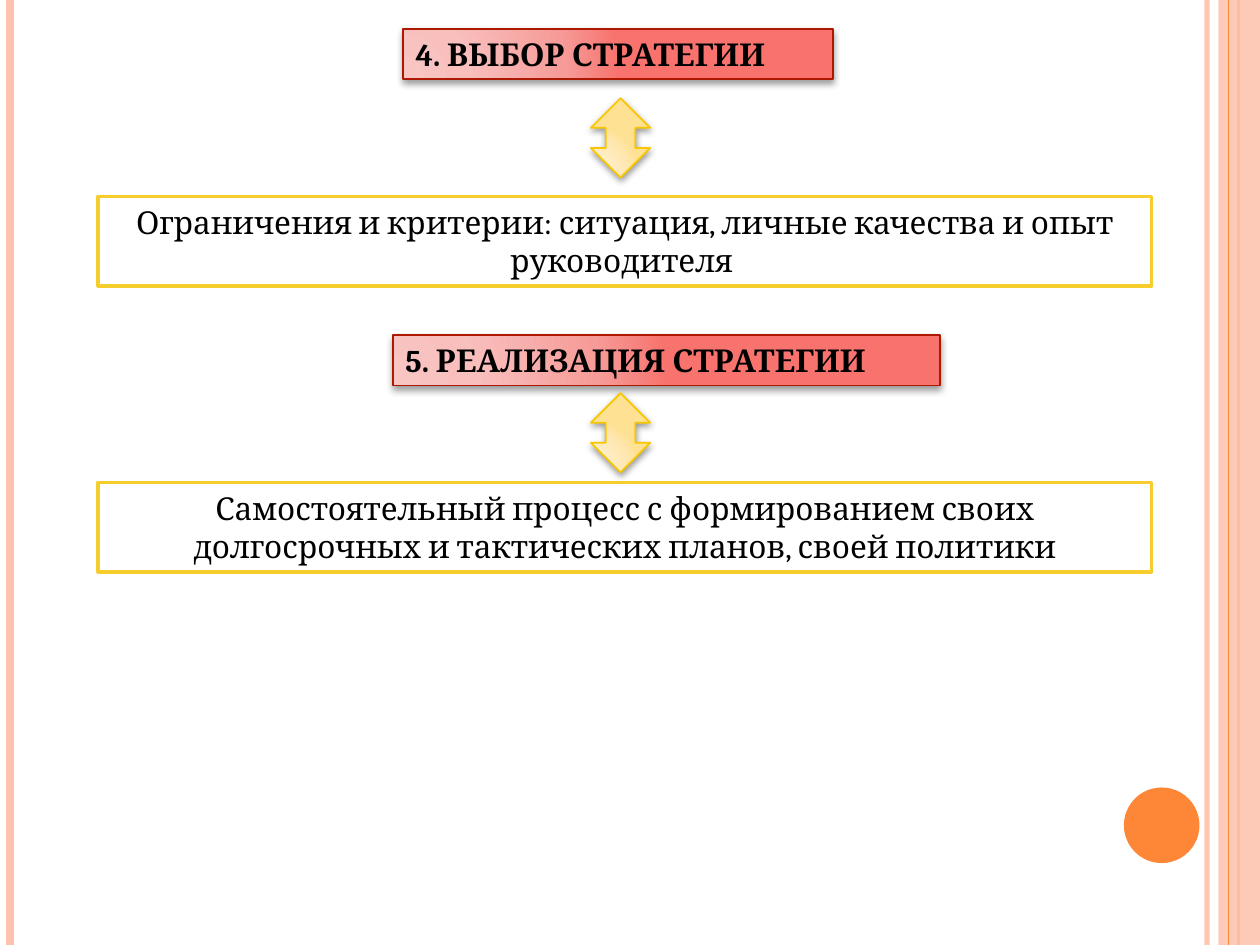
from dataclasses import dataclass
from lxml.etree import SubElement
from pptx import Presentation
from pptx.dml.color import RGBColor
from pptx.enum.shapes import MSO_CONNECTOR, MSO_SHAPE
from pptx.enum.text import MSO_AUTO_SIZE, PP_ALIGN
from pptx.oxml import parse_xml
from pptx.oxml.ns import nsdecls, qn
from pptx.util import Inches, Pt


@dataclass(frozen=True)
class Theme:
    font: str = "Cambria"
    size: float = 18
    ink: str = "000000"
    paper: str = "FFFFFF"
    peach: str = "FEC3AE"
    orange: str = "FE8637"
    gold: str = "F5CD2D"
    amber: str = "F8C700"
    brick: str = "AC1800"
    reds: tuple = ("F8C5C3", "F8BFBD", "F69B98", "F8736E")
    creams: tuple = ("FFF0D1", "FFEFCC", "FFE7B1", "FFE193")
    stops: tuple = (0, 30, 75, 100)


class Board:
    """Draws the elements of one slide in a shared theme."""

    def __init__(self, slide, theme):
        self.shapes = slide.shapes
        self.theme = theme

    def fade(self, fill, alpha):
        for tone in fill.iter(qn("a:srgbClr")):
            SubElement(tone, qn("a:alpha")).set("val", str(alpha * 1000))

    def paint(self, shape, fill, line=None, width=1):
        shape.shadow.inherit = False
        shape.fill.solid()
        shape.fill.fore_color.rgb = RGBColor.from_string(fill)
        if line:
            shape.line.color.rgb = RGBColor.from_string(line)
            shape.line.width = Pt(width)
        else:
            shape.line.fill.background()

    def glow(self, shape, tones, line):
        self.paint(shape, tones[0], line)
        stops = "".join(
            f'<a:gs pos="{pos * 1000}"><a:srgbClr val="{tone}"/></a:gs>'
            for pos, tone in zip(self.theme.stops, tones))
        props = shape._element.spPr
        props.replace(props.find(qn("a:solidFill")), parse_xml(
            f'<a:gradFill {nsdecls("a")} rotWithShape="1"><a:gsLst>{stops}</a:gsLst>'
            '<a:path path="circle"><a:fillToRect l="5000" t="100000" r="120000" '
            'b="10000"/></a:path></a:gradFill>'))
        props.find(qn("a:effectLst")).append(parse_xml(
            f'<a:outerShdw {nsdecls("a")} blurRad="{Pt(4)}" dist="{Pt(2)}" '
            f'dir="5400000" rotWithShape="0"><a:srgbClr val="{self.theme.ink}">'
            '<a:alpha val="40000"/></a:srgbClr></a:outerShdw>'))

    def stripe(self, left, tone, width, alpha=None):
        line = self.shapes.add_connector(
            MSO_CONNECTOR.STRAIGHT, Inches(left), 0, Inches(left), Inches(7.5))
        line.line.color.rgb = RGBColor.from_string(tone)
        line.line.width = Pt(width)
        props = line._element.spPr
        SubElement(props, qn("a:effectLst"))
        if alpha:
            self.fade(props, alpha)

    def form(self, kind, area, tone, alpha=None):
        shape = self.shapes.add_shape(kind, *map(Inches, area))
        self.paint(shape, tone)
        if alpha:
            self.fade(shape._element.spPr, alpha)

    def arrow(self, top):
        shape = self.shapes.add_shape(
            MSO_SHAPE.UP_DOWN_ARROW, *map(Inches, (4.69, top, 0.47, 0.63)))
        self.glow(shape, self.theme.creams, self.theme.amber)

    def text(self, area, words, bold, wrap, align):
        shape = self.shapes.add_textbox(*map(Inches, area))
        frame = shape.text_frame
        frame.word_wrap = wrap
        frame.auto_size = MSO_AUTO_SIZE.SHAPE_TO_FIT_TEXT
        para = frame.paragraphs[0]
        para.alignment = align
        run = para.add_run()
        run.text = words
        run.font.name = self.theme.font
        run.font.size = Pt(self.theme.size)
        run.font.bold = bold
        run.font.color.rgb = RGBColor.from_string(self.theme.ink)
        return shape

    def title(self, left, top, width, words):
        shape = self.text((left, top, width, 0.4), words, True, False, PP_ALIGN.LEFT)
        self.glow(shape, self.theme.reds, self.theme.brick)

    def note(self, top, words):
        shape = self.text((0.78, top, 8.36, 0.71), words, False, True, PP_ALIGN.CENTER)
        self.paint(shape, self.theme.paper, self.theme.gold, 2)


def main():
    deck = Presentation()
    deck.slide_width, deck.slide_height = Inches(10), Inches(7.5)
    theme = Theme()
    board = Board(deck.slides.add_slide(deck.slide_layouts[6]), theme)

    board.stripe(9.58, theme.peach, 3, 93)
    board.stripe(0.08, theme.peach, 4.5)
    board.stripe(9.83, theme.orange, 1.5)
    board.form(MSO_SHAPE.RECTANGLE, (9.67, 0, 0.33, 7.5), theme.peach, 87)
    board.stripe(9.75, theme.orange, 0.75)
    board.form(MSO_SHAPE.OVAL, (8.92, 6.25, 0.6, 0.6), theme.orange)

    steps = (
        ((3.2, 0.23, 3.41, "4. ВЫБОР СТРАТЕГИИ"), 0.78, 1.56,
         "Ограничения и критерии: ситуация, личные качества и опыт руководителя "),
        ((3.12, 2.66, 4.34, "5. РЕАЛИЗАЦИЯ СТРАТЕГИИ"), 3.12, 3.83,
         "Самостоятельный процесс с формированием своих долгосрочных "
         "и тактических планов, своей политики"),
    )
    for head, mid, low, words in steps:
        board.title(*head)
        board.arrow(mid)
        board.note(low, words)

    deck.save("out.pptx")


if __name__ == "__main__":
    main()
